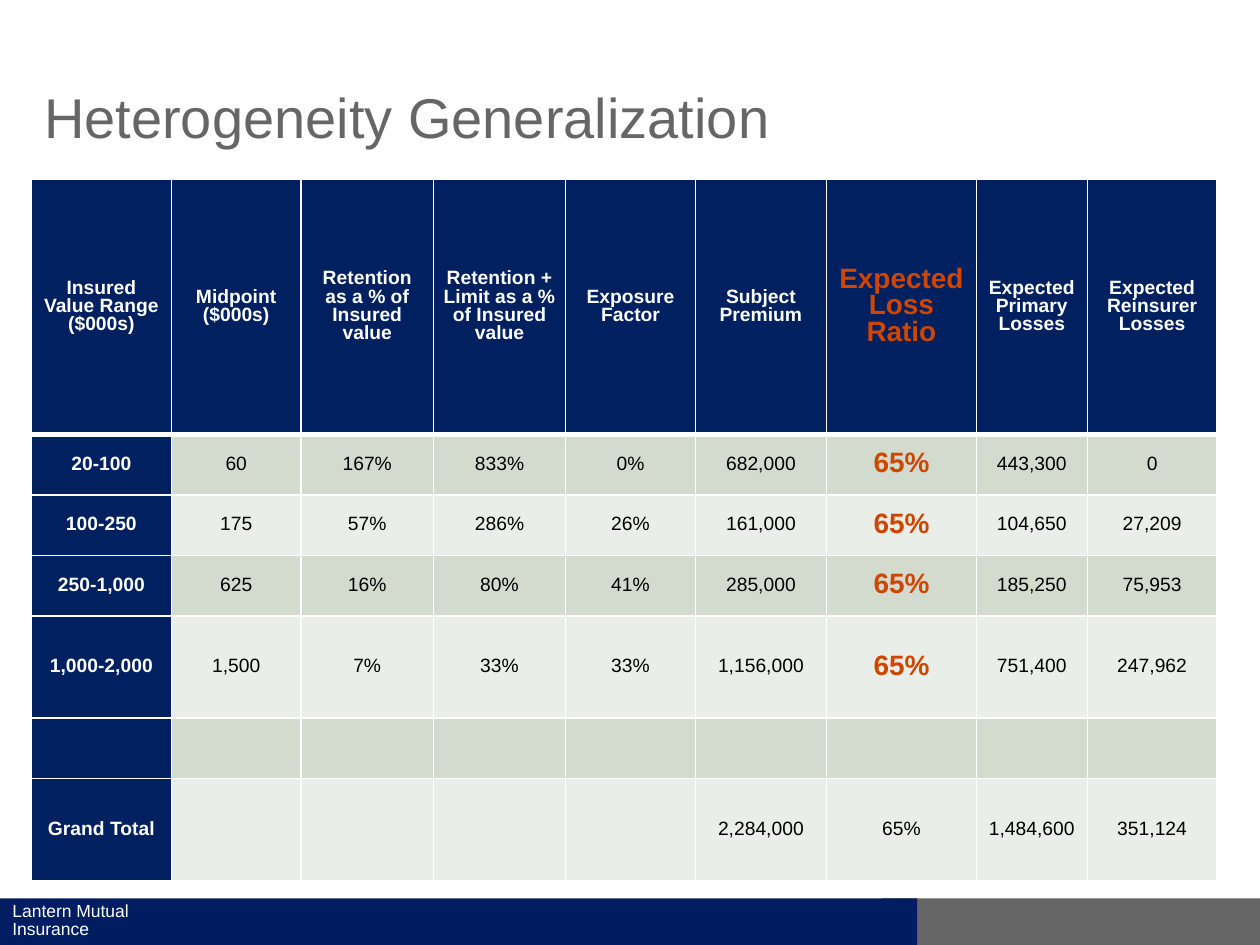
import pptx
import pptx.dml.color
import pptx.enum.shapes
import pptx.enum.text
import pptx.oxml.ns
import pptx.util
from lxml import etree

Inches = pptx.util.Inches
Pt = pptx.util.Pt
ALIGN = pptx.enum.text.PP_ALIGN
MIDDLE = pptx.enum.text.MSO_ANCHOR.MIDDLE

COLORS = {
    "white": "FFFFFF",
    "black": "000000",
    "gray": "666666",
    "footer": "001D61",
    "navy": "002060",
    "accent": "CE4600",
    "band_dark": "D3DBCF",
    "band_light": "EAEEE8",
}

HEADINGS = [
    "Insured Value Range ($000s)", "Midpoint ($000s)",
    "Retention as a % of Insured value",
    "Retention + Limit as a % of Insured value",
    "Exposure Factor", "Subject Premium", "Expected Loss Ratio",
    "Expected Primary Losses", "Expected Reinsurer Losses",
]
EXPOSURES = [
    ["20-100", "60", "167%", "833%", "0%", "682,000", "65%", "443,300", "0"],
    ["100-250", "175", "57%", "286%", "26%", "161,000", "65%", "104,650", "27,209"],
    ["250-1,000", "625", "16%", "80%", "41%", "285,000", "65%", "185,250", "75,953"],
    ["1,000-2,000", "1,500", "7%", "33%", "33%", "1,156,000", "65%", "751,400", "247,962"],
]
SPACER = [""] * len(HEADINGS)
GRAND_TOTAL = ["Grand Total", "", "", "", "", "2,284,000", "65%", "1,484,600", "351,124"]
COLUMN_WIDTHS = [1.11, 1.03, 1.05, 1.05, 1.03, 1.04, 1.19, 0.88, 1.03]
ROW_HEIGHTS = [2.03, 0.48, 0.48, 0.48, 0.81, 0.48, 0.81]
LOSS_RATIO = HEADINGS.index("Expected Loss Ratio")


def rgb(name):
    return pptx.dml.color.RGBColor.from_string(COLORS[name])


def add_border(cell, side, points):
    """Draw a white border; side is L, R, T or B."""
    qn = pptx.oxml.ns.qn
    properties = cell._tc.get_or_add_tcPr()
    line = etree.SubElement(properties, qn(f"a:ln{side}"), w=str(Pt(points)))
    fill = etree.SubElement(line, qn("a:solidFill"))
    etree.SubElement(fill, qn("a:srgbClr"), val=COLORS["white"])


class SlideBuilder:
    def __init__(self, slide, font="Arial"):
        self.slide = slide
        self.font = font

    def style(self, paragraph, size, color, bold=False, align=ALIGN.LEFT, spacing=0.85):
        paragraph.alignment = align
        paragraph.line_spacing = spacing
        font = paragraph.font
        font.name, font.size, font.bold = self.font, Pt(size), bold
        font.color.rgb = rgb(color)

    def title(self, text, left, top, width, height):
        title = self.slide.shapes.title
        title.left, title.top = Inches(left), Inches(top)
        title.width, title.height = Inches(width), Inches(height)
        frame = title.text_frame
        frame.text = text
        frame.vertical_anchor = MIDDLE
        self.style(frame.paragraphs[0], 32, "gray", spacing=1.0)

    def bar(self, color, left, top, width, height):
        bar = self.slide.shapes.add_shape(
            pptx.enum.shapes.MSO_SHAPE.RECTANGLE,
            Inches(left), Inches(top), Inches(width), Inches(height))
        bar.shadow.inherit = False
        bar.fill.solid()
        bar.fill.fore_color.rgb = rgb(color)
        bar.line.fill.background()

    def label(self, text, left, top, width, height):
        frame = self.slide.shapes.add_textbox(
            Inches(left), Inches(top), Inches(width), Inches(height)).text_frame
        frame.word_wrap = False
        frame.vertical_anchor = MIDDLE
        frame.margin_top = frame.margin_bottom = 0
        frame.text = text
        self.style(frame.paragraphs[0], 10, "white")

    def table(self, rows, left, top):
        table = self.slide.shapes.add_table(
            len(rows), len(COLUMN_WIDTHS), Inches(left), Inches(top),
            Inches(sum(COLUMN_WIDTHS)), Inches(sum(ROW_HEIGHTS))).table
        table.first_col = True
        for column, width in zip(table.columns, COLUMN_WIDTHS):
            column.width = Inches(width)
        for row, height in zip(table.rows, ROW_HEIGHTS):
            row.height = Inches(height)
        for r, values in enumerate(rows):
            for c, text in enumerate(values):
                self.cell(table.cell(r, c), text, r, c, values is GRAND_TOTAL)

    def cell(self, cell, text, row, column, is_total):
        heading = row == 0 or column == 0
        highlight = column == LOSS_RATIO and not is_total
        cell.vertical_anchor = MIDDLE
        cell.margin_left = cell.margin_right = Inches(0.07)
        cell.margin_top = cell.margin_bottom = 0
        add_border(cell, "L", 1)
        add_border(cell, "R", 1)
        add_border(cell, "T", 3 if row == 1 else 1)
        add_border(cell, "B", 3 if row == 0 else 1)
        band = "band_dark" if row % 2 else "band_light"
        cell.fill.solid()
        cell.fill.fore_color.rgb = rgb("navy" if heading else band)
        if text:
            cell.text = text
        color = "accent" if highlight else "white" if heading else "black"
        self.style(cell.text_frame.paragraphs[0], 16 if highlight else 11, color,
                   bold=heading or highlight, align=ALIGN.CENTER)


def main():
    presentation = pptx.Presentation()
    presentation.slide_width, presentation.slide_height = Inches(10), Inches(7.5)
    title_only = presentation.slide_layouts[5]
    builder = SlideBuilder(presentation.slides.add_slide(title_only))
    builder.bar("gray", 7, 7.13, 3, 0.37)
    builder.bar("footer", 0, 7.13, 7.28, 0.37)
    builder.label("Lantern Mutual Insurance", 0, 7.13, 1.75, 0.36)
    builder.title("Heterogeneity Generalization", 0.25, 0.3, 9.5, 1.25)
    builder.table([HEADINGS, *EXPOSURES, SPACER, GRAND_TOTAL], 0.25, 1.42)
    presentation.save("out.pptx")


if __name__ == "__main__":
    main()
